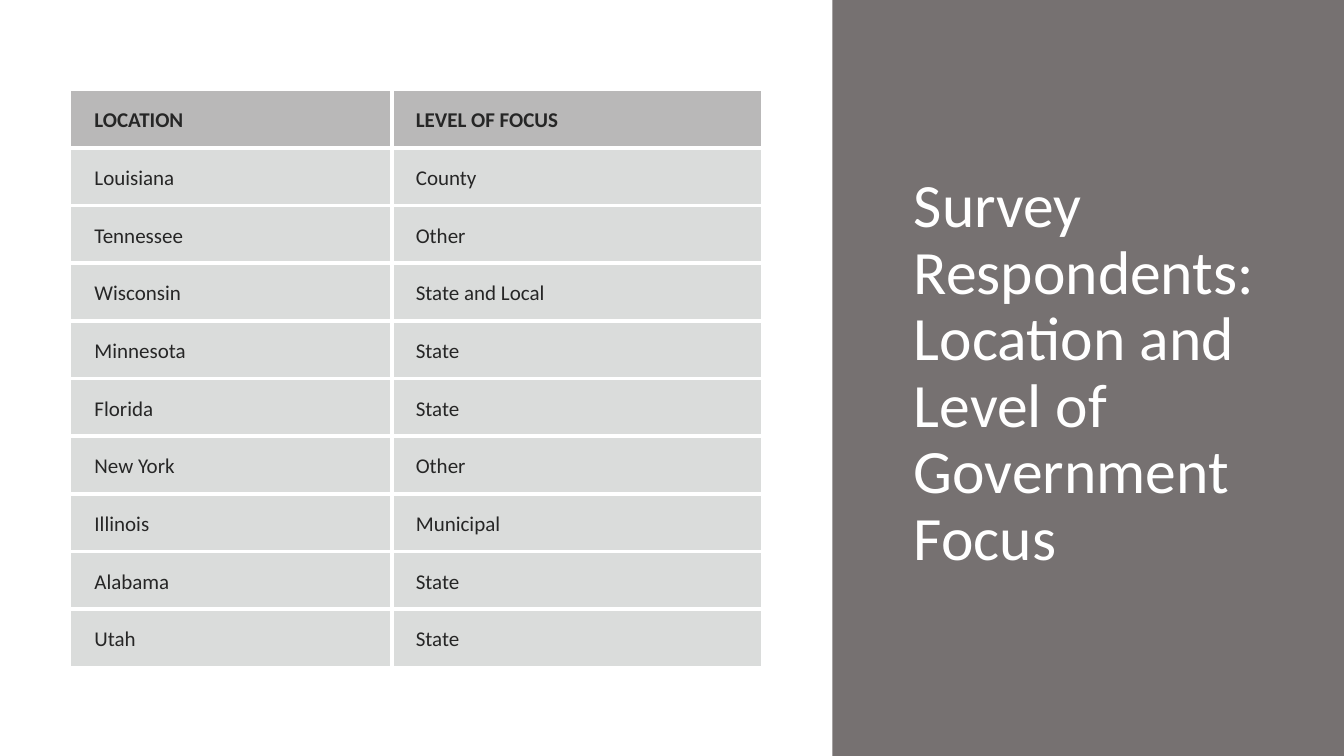
from lxml.etree import SubElement
from pptx import Presentation
from pptx.dml.color import RGBColor
from pptx.enum.shapes import MSO_SHAPE
from pptx.enum.text import MSO_ANCHOR
from pptx.oxml.ns import qn
from pptx.util import Cm, Pt

TITLE = "Survey Respondents: Location and Level of Government Focus"
ROWS = [
    ("LOCATION", "LEVEL OF FOCUS"),
    ("Louisiana", "County"),
    ("Tennessee", "Other"),
    ("Wisconsin", "State and Local"),
    ("Minnesota", "State"),
    ("Florida", "State"),
    ("New York", "Other"),
    ("Illinois", "Municipal"),
    ("Alabama", "State"),
    ("Utah", "State"),
]
COLORS = {"panel": "767171", "white": "FFFFFF", "text": "262626",
          "head": "181717", "body": "878E8B"}
FONT = "Calibri"
WIDTHS = (Cm(8.1), Cm(9.32))
HEIGHT = Cm(14.53)


def style(frame, size, color, bold=False):
    for par in frame.paragraphs:
        for run in par.runs:
            font = run.font
            font.name, font.size, font.bold = FONT, Pt(size), bold
            font.color.rgb = RGBColor.from_string(COLORS[color])


def border(cell, sides):
    """Draw white 3 pt lines on the sides, given in the order L, R, T, B."""
    props = cell._tc.get_or_add_tcPr()
    for side in sides:
        line = SubElement(props, qn("a:ln" + side), w=str(Pt(3)))
        fill = SubElement(line, qn("a:solidFill"))
        SubElement(fill, qn("a:srgbClr"), val=COLORS["white"])


def tint(cell, color):
    """Fill the cell with the colour at 30 % opacity."""
    cell.fill.solid()
    cell.fill.fore_color.rgb = RGBColor.from_string(COLORS[color])
    shade = cell._tc.tcPr.find(qn("a:solidFill")).find(qn("a:srgbClr"))
    SubElement(shade, qn("a:alpha"), val="30000")


def add_panel(slide, deck):
    left = Cm(20.98)
    panel = slide.shapes.add_shape(
        MSO_SHAPE.RECTANGLE, left, 0, deck.slide_width - left, deck.slide_height)
    panel.shadow.inherit = False
    panel.fill.solid()
    panel.fill.fore_color.rgb = RGBColor.from_string(COLORS["panel"])
    panel.line.fill.background()


def add_title(slide):
    box = slide.shapes.add_textbox(Cm(22.78), Cm(1.78), Cm(10.19), Cm(15.29))
    frame = box.text_frame
    frame.word_wrap = True
    frame.vertical_anchor = MSO_ANCHOR.MIDDLE
    frame.text = TITLE
    frame.paragraphs[0].line_spacing = 0.9
    style(frame, 44, "white")


def add_grid(slide):
    table = slide.shapes.add_table(
        len(ROWS), len(WIDTHS), Cm(1.78), Cm(2.27), sum(WIDTHS), HEIGHT).table
    table.horz_banding = False
    for col, width in zip(table.columns, WIDTHS):
        col.width = width
    for r, words in enumerate(ROWS):
        table.rows[r].height = HEIGHT // len(ROWS)
        for c, word in enumerate(words):
            cell = table.cell(r, c)
            cell.text = word
            cell.vertical_anchor = MSO_ANCHOR.BOTTOM
            cell.margin_left = Cm(0.6)
            cell.margin_right = cell.margin_top = cell.margin_bottom = Cm(0.36)
            style(cell.text_frame, 15, "text", r == 0)
            inner = {"L": c > 0, "R": c < len(WIDTHS) - 1,
                     "T": r > 0, "B": r < len(ROWS) - 1}
            border(cell, [side for side, shown in inner.items() if shown])
            tint(cell, "body" if r else "head")


def main():
    deck = Presentation()
    deck.slide_width, deck.slide_height = Cm(33.87), Cm(19.05)
    slide = deck.slides.add_slide(deck.slide_layouts[6])
    add_panel(slide, deck)
    add_title(slide)
    add_grid(slide)
    deck.save("out.pptx")


if __name__ == "__main__":
    main()
